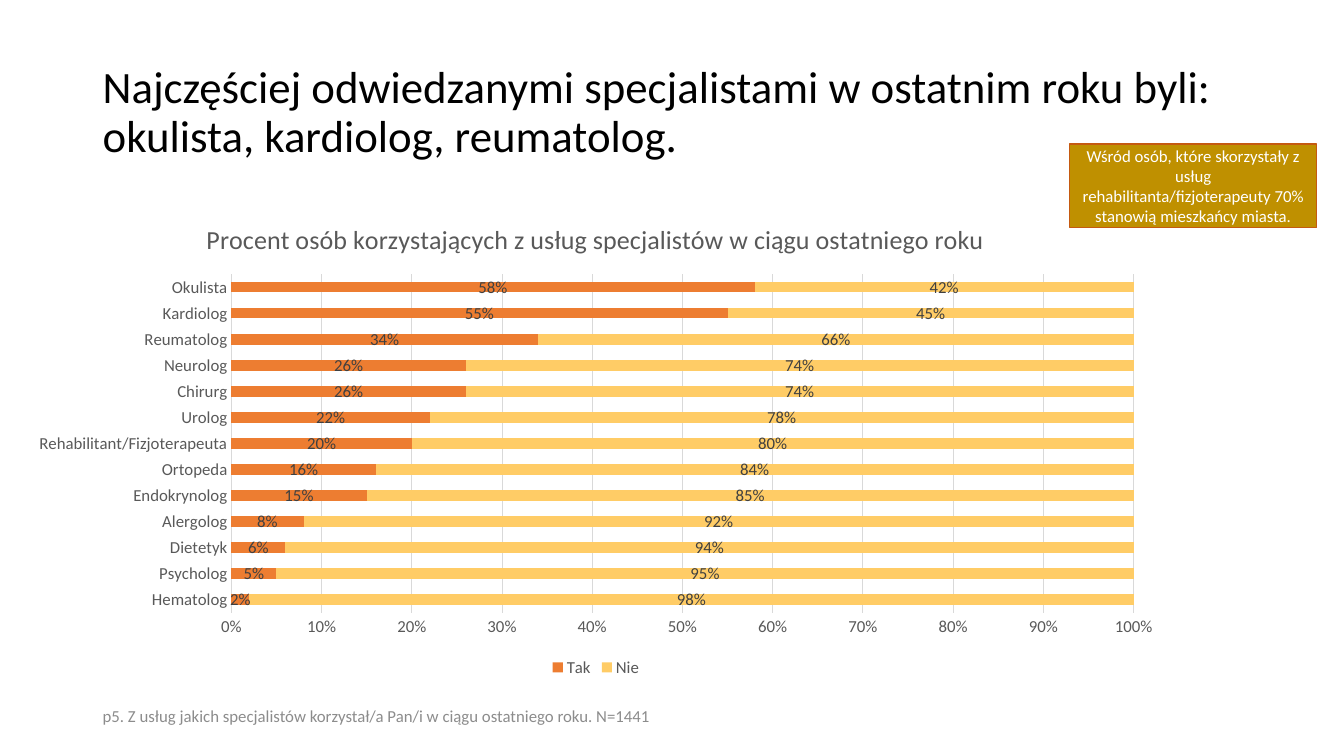
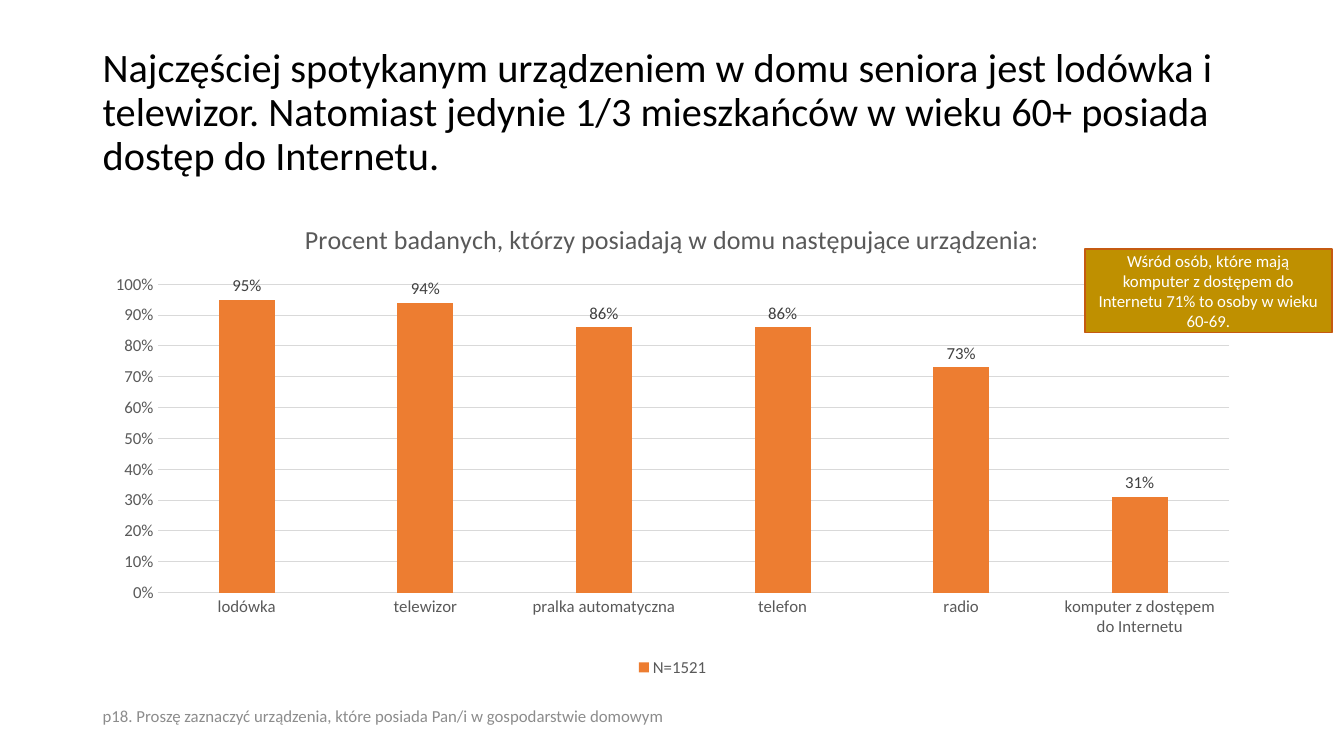
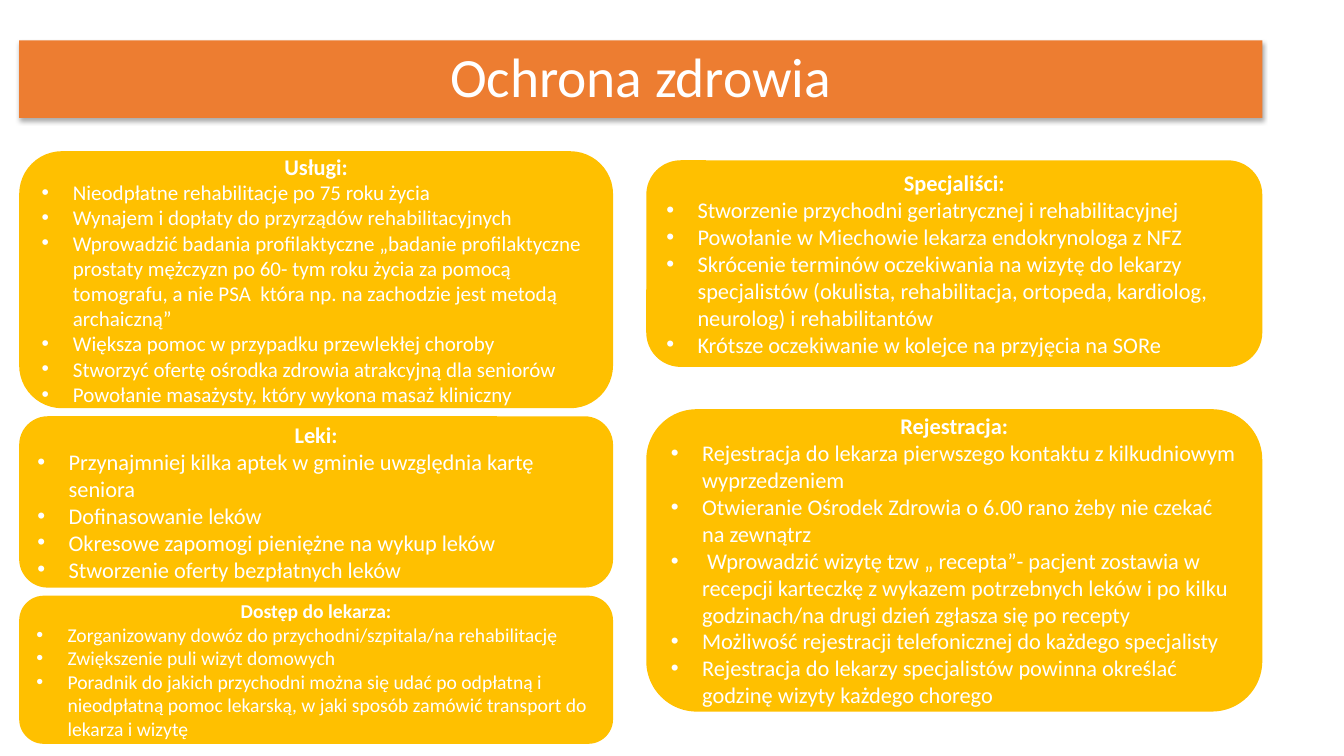
from lxml import etree
from pptx import Presentation
from pptx.chart.data import CategoryChartData
from pptx.dml.color import RGBColor
from pptx.enum.chart import XL_CHART_TYPE, XL_LABEL_POSITION, XL_LEGEND_POSITION, XL_TICK_MARK
from pptx.enum.shapes import MSO_SHAPE
from pptx.enum.text import MSO_ANCHOR, PP_ALIGN
from pptx.oxml.ns import qn
from pptx.util import Inches, Pt

BAR_STACKED = XL_CHART_TYPE.BAR_STACKED_100
COLUMN_CLUSTERED = XL_CHART_TYPE.COLUMN_CLUSTERED
LABEL_CENTER = XL_LABEL_POSITION.CENTER
LABEL_OUTSIDE = XL_LABEL_POSITION.OUTSIDE_END
LEGEND_BOTTOM = XL_LEGEND_POSITION.BOTTOM
NO_TICK = XL_TICK_MARK.NONE
RECTANGLE = MSO_SHAPE.RECTANGLE
ROUNDED = MSO_SHAPE.ROUNDED_RECTANGLE
MIDDLE = MSO_ANCHOR.MIDDLE
LEFT, CENTER = PP_ALIGN.LEFT, PP_ALIGN.CENTER

FONT = "Calibri"
BLACK = RGBColor(0x00, 0x00, 0x00)
WHITE = RGBColor(0xFF, 0xFF, 0xFF)
ORANGE = RGBColor(0xED, 0x7D, 0x31)
LIGHT_YELLOW = RGBColor(0xFF, 0xCC, 0x66)
AMBER = RGBColor(0xFF, 0xC0, 0x00)
DARK_GOLD = RGBColor(0xBF, 0x90, 0x00)
RUST = RGBColor(0xC5, 0x5A, 0x11)
AXIS_GRAY = RGBColor(0x59, 0x59, 0x59)
LABEL_GRAY = RGBColor(0x40, 0x40, 0x40)
GRID_GRAY = RGBColor(0xD9, 0xD9, 0xD9)
FOOTER_GRAY = RGBColor(0x8C, 0x8C, 0x8C)

TITLE_BOX = (0.92, 0.4, 11.5, 1.45)
FOOTER_BOX = (0.92, 6.9, 11.5, 0.4)
BANNER_BOX = (0.19, 0.4, 12.33, 0.77)
CHART_TOP, CHART_WIDTH, CHART_HEIGHT = 2, 11.5, 4.76
CALLOUT_WIDTH, CALLOUT_HEIGHT = 2.45, 0.83
BULLET_INDENT = Inches(0.31)

SPECIALISTS = [
    ("Hematolog", 0.02), ("Psycholog", 0.05), ("Dietetyk", 0.06), ("Alergolog", 0.08),
    ("Endokrynolog", 0.15), ("Ortopeda", 0.16), ("Rehabilitant/Fizjoterapeuta", 0.2),
    ("Urolog", 0.22), ("Chirurg", 0.26), ("Neurolog", 0.26), ("Reumatolog", 0.34),
    ("Kardiolog", 0.55), ("Okulista", 0.58),
]
DEVICES = [
    ("lodówka", 0.95), ("telewizor", 0.94), ("pralka automatyczna", 0.86), ("telefon", 0.86),
    ("radio", 0.73), ("komputer z dostępem do Internetu", 0.31),
]

CHART_SLIDES = [
    {
        "title": "Najczęściej odwiedzanymi specjalistami w ostatnim roku byli: okulista, kardiolog, reumatolog.",
        "title_size": 32,
        "chart_title": "Procent osób korzystających z usług specjalistów w ciągu ostatniego roku",
        "chart_left": 0.16,
        "type": BAR_STACKED,
        "categories": [name for name, _ in SPECIALISTS],
        "series": [
            ("Tak", [share for _, share in SPECIALISTS], ORANGE),
            ("Nie", [round(1 - share, 2) for _, share in SPECIALISTS], LIGHT_YELLOW),
        ],
        "bars": {"gap_width": 150, "overlap": 100, "vary_by_categories": False},
        "label_position": LABEL_CENTER,
        "footer": "p5. Z usług jakich specjalistów korzystał/a Pan/i w ciągu ostatniego roku. N=1441",
        "callout": "Wśród osób, które skorzystały z usług rehabilitanta/fizjoterapeuty 70% stanowią mieszkańcy miasta.",
        "callout_at": (10.61, 1.43),
    },
    {
        "title": "Najczęściej spotykanym urządzeniem w domu seniora jest lodówka i telewizor. "
                 "Natomiast jedynie 1/3 mieszkańców w wieku 60+ posiada dostęp do Internetu.",
        "title_size": 28.8,
        "chart_title": "Procent badanych, którzy posiadają w domu następujące urządzenia:",
        "chart_left": 0.92,
        "type": COLUMN_CLUSTERED,
        "categories": [name for name, _ in DEVICES],
        "series": [("N=1521", [share for _, share in DEVICES], ORANGE)],
        "bars": {"gap_width": 219, "overlap": -27, "vary_by_categories": False},
        "label_position": LABEL_OUTSIDE,
        "footer": "p18. Proszę zaznaczyć urządzenia, które posiada Pan/i w gospodarstwie domowym",
        "callout": "Wśród osób, które mają komputer z dostępem do Internetu 71% to osoby w wieku 60-69.",
        "callout_at": (10.76, 2.47),
    },
]

HEALTH_TITLE = "Ochrona zdrowia"
HEALTH_COLUMNS = [
    {"left": 0.19, "top": 1.5, "width": 5.89, "gap": 0.08, "cards": [
        ("Usługi:", 2.55, 16, 15, [
            "Nieodpłatne rehabilitacje po 75 roku życia",
            "Wynajem i dopłaty do przyrządów rehabilitacyjnych",
            "Wprowadzić badania profilaktyczne „badanie profilaktyczne prostaty mężczyzn po 60- tym "
            "roku życia za pomocą tomografu, a nie PSA  która np. na zachodzie jest metodą archaiczną”",
            "Większa pomoc w przypadku przewlekłej choroby",
            "Stworzyć ofertę ośrodka zdrowia atrakcyjną dla seniorów",
            "Powołanie masażysty, który wykona masaż kliniczny",
        ]),
        ("Leki:", 1.7, 16, 16, [
            "Przynajmniej kilka aptek w gminie uwzględnia kartę seniora",
            "Dofinasowanie leków",
            "Okresowe zapomogi pieniężne na wykup leków",
            "Stworzenie oferty bezpłatnych leków",
        ]),
        ("Dostęp do lekarza:", 1.47, 14, 14, [
            "Zorganizowany dowóz do przychodni/szpitala/na rehabilitację",
            "Zwiększenie puli wizyt domowych",
            "Poradnik do jakich przychodni można się udać po odpłatną i nieodpłatną pomoc lekarską, "
            "w jaki sposób zamówić transport do lekarza i wizytę",
        ]),
    ]},
    {"left": 6.41, "top": 1.59, "width": 6.11, "gap": 0.42, "cards": [
        ("Specjaliści:", 2.05, 16, 16, [
            "Stworzenie przychodni geriatrycznej i rehabilitacyjnej",
            "Powołanie w Miechowie lekarza endokrynologa z NFZ",
            "Skrócenie terminów oczekiwania na wizytę do lekarzy specjalistów "
            "(okulista, rehabilitacja, ortopeda, kardiolog, neurolog) i rehabilitantów",
            "Krótsze oczekiwanie w kolejce na przyjęcia na SORe",
        ]),
        ("Rejestracja:", 3, 16, 16, [
            "Rejestracja do lekarza pierwszego kontaktu z kilkudniowym wyprzedzeniem",
            "Otwieranie Ośrodek Zdrowia o 6.00 rano żeby nie czekać na zewnątrz",
            " Wprowadzić wizytę tzw „ recepta”- pacjent zostawia w recepcji karteczkę z wykazem "
            "potrzebnych leków i po kilku godzinach/na drugi dzień zgłasza się po recepty",
            "Możliwość rejestracji telefonicznej do każdego specjalisty",
            "Rejestracja do lekarzy specjalistów powinna określać godzinę wizyty każdego chorego",
        ]),
    ]},
]


def set_values(target, values):
    for name, value in values.items():
        setattr(target, name, value)


def set_font(font, size, color, bold=False):
    set_values(font, {"name": FONT, "size": Pt(size), "bold": bold})
    font.color.rgb = color


def write(paragraph, text, size, color, bold=False, **layout):
    run = paragraph.add_run()
    run.text = text
    set_font(run.font, size, color, bold)
    set_values(paragraph, layout)


def add_text(slide, box, text, size, color, **layout):
    shape = slide.shapes.add_textbox(*map(Inches, box))
    set_values(shape.text_frame, {"word_wrap": True, "vertical_anchor": MIDDLE})
    write(shape.text_frame.paragraphs[0], text, size, color, **layout)


def add_panel(slide, preset, box, fill, line=None):
    shape = slide.shapes.add_shape(preset, *map(Inches, box))
    shape.shadow.inherit = False
    shape.fill.solid()
    shape.fill.fore_color.rgb = fill
    if line is None:
        shape.line.fill.background()
    else:
        shape.line.color.rgb = line
        shape.line.width = Pt(1)
    set_values(shape.text_frame, {"word_wrap": True, "vertical_anchor": MIDDLE})
    return shape


def add_drop_shadow(shape):
    effects = shape._element.spPr.find(qn("a:effectLst"))
    shadow = etree.SubElement(effects, qn("a:outerShdw"), blurRad=str(Pt(3.5)), dist=str(Pt(2.2)),
                              dir="5400000", algn="ctr", rotWithShape="0")
    color = etree.SubElement(shadow, qn("a:srgbClr"), val=str(BLACK))
    etree.SubElement(color, qn("a:alpha"), val="32000")


def add_bullet(paragraph):
    properties = paragraph._p.get_or_add_pPr()
    properties.set("marL", str(BULLET_INDENT))
    properties.set("indent", str(-BULLET_INDENT))
    etree.SubElement(properties, qn("a:buFont"), typeface="Arial")
    etree.SubElement(properties, qn("a:buChar"), char="•")


def style_line(line):
    line.color.rgb = GRID_GRAY
    line.width = Pt(0.75)


def add_bar_chart(slide, content):
    data = CategoryChartData(number_format="0%")
    data.categories = content["categories"]
    for name, values, _ in content["series"]:
        data.add_series(name, values)
    box = (content["chart_left"], CHART_TOP, CHART_WIDTH, CHART_HEIGHT)
    chart = slide.shapes.add_chart(content["type"], *map(Inches, box), data).chart
    set_font(chart.font, 10, BLACK)

    chart.has_title = True
    write(chart.chart_title.text_frame.paragraphs[0], content["chart_title"], 18.6, AXIS_GRAY)
    chart.chart_title.include_in_layout = False
    chart.has_legend = True
    set_values(chart.legend, {"position": LEGEND_BOTTOM, "include_in_layout": False})
    set_font(chart.legend.font, 12, AXIS_GRAY)

    for axis in (chart.category_axis, chart.value_axis):
        set_values(axis, {"major_tick_mark": NO_TICK, "minor_tick_mark": NO_TICK})
        set_font(axis.tick_labels.font, 12, AXIS_GRAY)
    style_line(chart.category_axis.format.line)
    value_axis = chart.value_axis
    set_values(value_axis, {"minimum_scale": 0, "maximum_scale": 1, "major_unit": 0.1,
                            "has_major_gridlines": True})
    set_values(value_axis.tick_labels, {"number_format": "0%", "number_format_is_linked": False})
    value_axis.format.line.fill.background()
    style_line(value_axis.major_gridlines.format.line)

    plot = chart.plots[0]
    set_values(plot, content["bars"])
    for series, (_, _, color) in zip(plot.series, content["series"]):
        series.format.fill.solid()
        series.format.fill.fore_color.rgb = color
        series.invert_if_negative = False
        set_values(series.data_labels, {"show_value": True, "position": content["label_position"],
                                        "number_format": "0%", "number_format_is_linked": False})
        set_font(series.data_labels.font, 12, LABEL_GRAY)


def build_chart_slide(slide, content):
    add_text(slide, TITLE_BOX, content["title"], content["title_size"], BLACK, line_spacing=0.9)
    add_bar_chart(slide, content)
    add_text(slide, FOOTER_BOX, content["footer"], 12, FOOTER_GRAY)
    callout_box = (*content["callout_at"], CALLOUT_WIDTH, CALLOUT_HEIGHT)
    callout = add_panel(slide, RECTANGLE, callout_box, DARK_GOLD, RUST)
    write(callout.text_frame.paragraphs[0], content["callout"], 12, WHITE, alignment=CENTER)


def build_health_slide(slide):
    banner = add_panel(slide, RECTANGLE, BANNER_BOX, ORANGE)
    add_drop_shadow(banner)
    write(banner.text_frame.paragraphs[0], HEALTH_TITLE, 39.6, WHITE, alignment=CENTER, line_spacing=0.9)
    for column in HEALTH_COLUMNS:
        top = column["top"]
        for heading, height, heading_size, item_size, items in column["cards"]:
            card = add_panel(slide, ROUNDED, (column["left"], top, column["width"], height), AMBER)
            frame = card.text_frame
            write(frame.paragraphs[0], heading, heading_size, WHITE, True, alignment=CENTER)
            for item in items:
                paragraph = frame.add_paragraph()
                write(paragraph, item, item_size, WHITE, alignment=LEFT)
                add_bullet(paragraph)
            top += height + column["gap"]


def main():
    presentation = Presentation()
    presentation.slide_width = Inches(13.33)
    presentation.slide_height = Inches(7.5)
    blank = presentation.slide_layouts[6]
    for content in CHART_SLIDES:
        build_chart_slide(presentation.slides.add_slide(blank), content)
    build_health_slide(presentation.slides.add_slide(blank))
    presentation.save("out.pptx")


if __name__ == "__main__":
    main()
